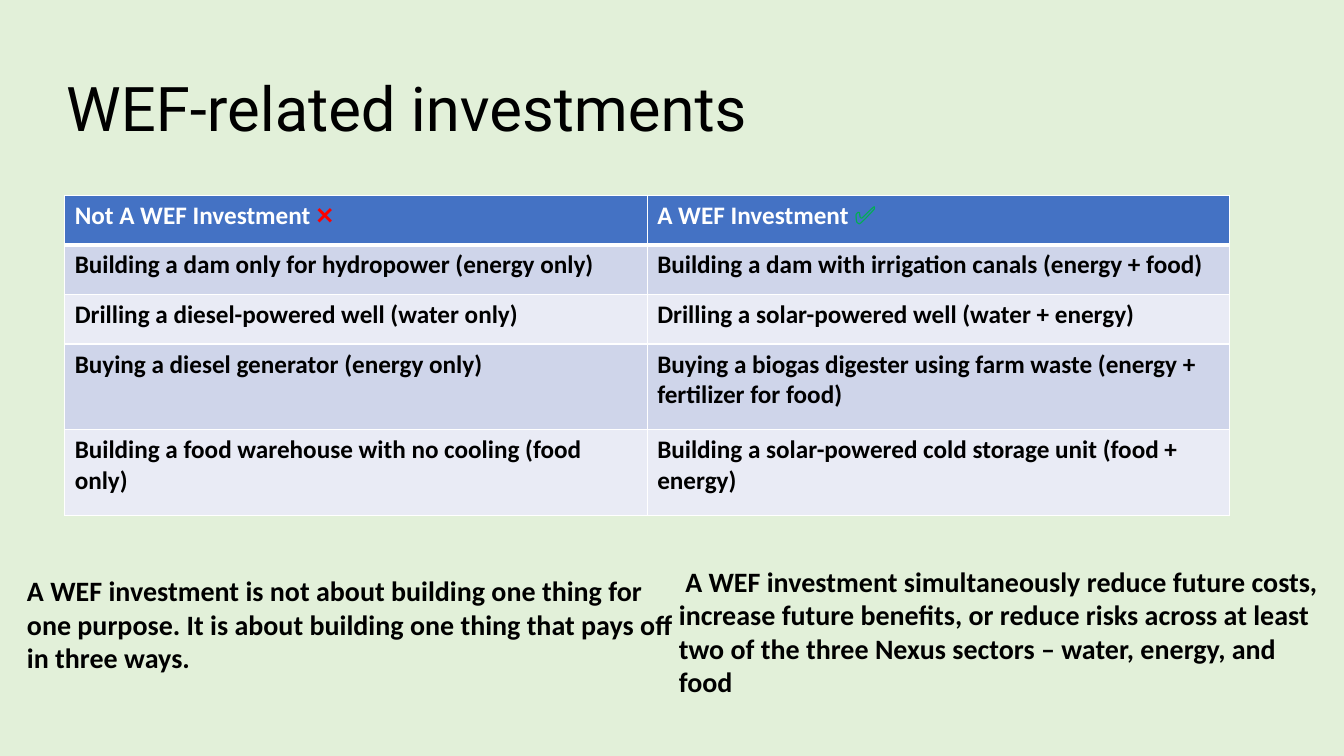
from lxml import etree
from pptx import Presentation, util as u
from pptx.dml.color import RGBColor
from pptx.enum import text
from pptx.oxml import ns


def color(value):
    return RGBColor.from_string(value)


class SlideBuilder:
    """Holds the slide, its palette and fonts, and adds elements to it."""

    ink, white, header = "000000", "FFFFFF", "4472C4"
    bands = ("CFD5EA", "E9EBF5")
    heading_font, body_font = "Roboto", "Calibri"

    def __init__(self, presentation, background):
        self.slide = presentation.slides.add_slide(presentation.slide_layouts[6])
        fill = self.slide.background.fill
        fill.solid()
        fill.fore_color.rgb = color(background)

    def add_run(self, paragraph, content, size, ink=ink, font=body_font, bold=True):
        run = paragraph.add_run()
        run.text = content
        run.font.size = u.Pt(size)
        run.font.name = font
        run.font.bold = bold
        run.font.color.rgb = color(ink)

    def add_box(self, left, top, width, height, anchor=text.MSO_ANCHOR.TOP):
        shape = self.slide.shapes.add_textbox(u.Cm(left), u.Cm(top), u.Cm(width), u.Cm(height))
        shape.text_frame.word_wrap = True
        shape.text_frame.vertical_anchor = anchor
        return shape.text_frame.paragraphs[0]

    def add_title(self, content, *bounds):
        paragraph = self.add_box(*bounds, anchor=text.MSO_ANCHOR.MIDDLE)
        paragraph.line_spacing = 0.9
        self.add_run(paragraph, content, 44, font=self.heading_font, bold=False)

    def add_statement(self, runs, *bounds):
        paragraph = self.add_box(*bounds)
        for content, bold in runs:
            self.add_run(paragraph, content, 20, bold=bold)

    def add_borders(self, cell, widths):
        properties = cell._tc.get_or_add_tcPr()
        for index, (side, width) in enumerate(widths.items()):
            line = etree.Element(ns.qn(f"a:ln{side}"), w=str(u.Pt(width)))
            fill = etree.SubElement(line, ns.qn("a:solidFill"))
            etree.SubElement(fill, ns.qn("a:srgbClr"), val=self.white)
            properties.insert(index, line)

    def add_table(self, headings, rows, left, top, column_width, row_heights):
        shape = self.slide.shapes.add_table(
            len(row_heights), len(headings), u.Cm(left), u.Cm(top),
            u.Cm(column_width * len(headings)), u.Cm(sum(row_heights)))
        table = shape.table
        for column in table.columns:
            column.width = u.Cm(column_width)
        for row, height in zip(table.rows, row_heights):
            row.height = u.Cm(height)
        body = [[[(content, self.ink)] for content in row] for row in rows]
        for row_index, row in enumerate([headings] + body):
            fill = self.bands[(row_index - 1) % 2] if row_index else self.header
            widths = {"L": 1, "R": 1, "T": 3 if row_index == 1 else 1, "B": 1 if row_index else 3}
            for column_index, runs in enumerate(row):
                cell = table.cell(row_index, column_index)
                cell.fill.solid()
                cell.fill.fore_color.rgb = color(fill)
                self.add_borders(cell, widths)
                for content, ink in runs:
                    self.add_run(cell.text_frame.paragraphs[0], content, 18, ink)


def main():
    presentation = Presentation()
    presentation.slide_width, presentation.slide_height = u.Cm(33.87), u.Cm(19.05)
    builder = SlideBuilder(presentation, "E2F0D9")
    builder.add_title("WEF-related investments", 1.42, 0.97, 30.12, 3.68)
    headings = [
        [("Not A WEF Investment ", builder.white), ("❌", "FF0000")],
        [("A WEF Investment ", builder.white), ("✅", "00B050")],
    ]
    investments = [
        ("Building a dam only for hydropower (energy only)",
         "Building a dam with irrigation canals (energy + food)"),
        ("Drilling a diesel-powered well (water only)",
         "Drilling a solar-powered well (water + energy)"),
        ("Buying a diesel generator (energy only)",
         "Buying a biogas digester using farm waste (energy + fertilizer for food)"),
        ("Building a food warehouse with no cooling (food only)",
         "Building a solar-powered cold storage unit (food + energy)"),
    ]
    builder.add_table(headings, investments, 1.63, 4.92, 14.68, [1.25] * 3 + [2.16] * 2)
    builder.add_statement(
        [("A WEF investment is not about building one thing for one purpose. "
          "It is about building one thing that pays off in three ways.", True)],
        0.43, 14.33, 16.92, 2.82)
    builder.add_statement(
        [(" ", False),
         ("A WEF investment simultaneously reduce future costs, increase future benefits, "
          "or reduce risks across at least two of the three Nexus sectors – water, energy, "
          "and food", True)],
        16.86, 14.09, 17.01, 3.78)
    presentation.save("out.pptx")


if __name__ == "__main__":
    main()
